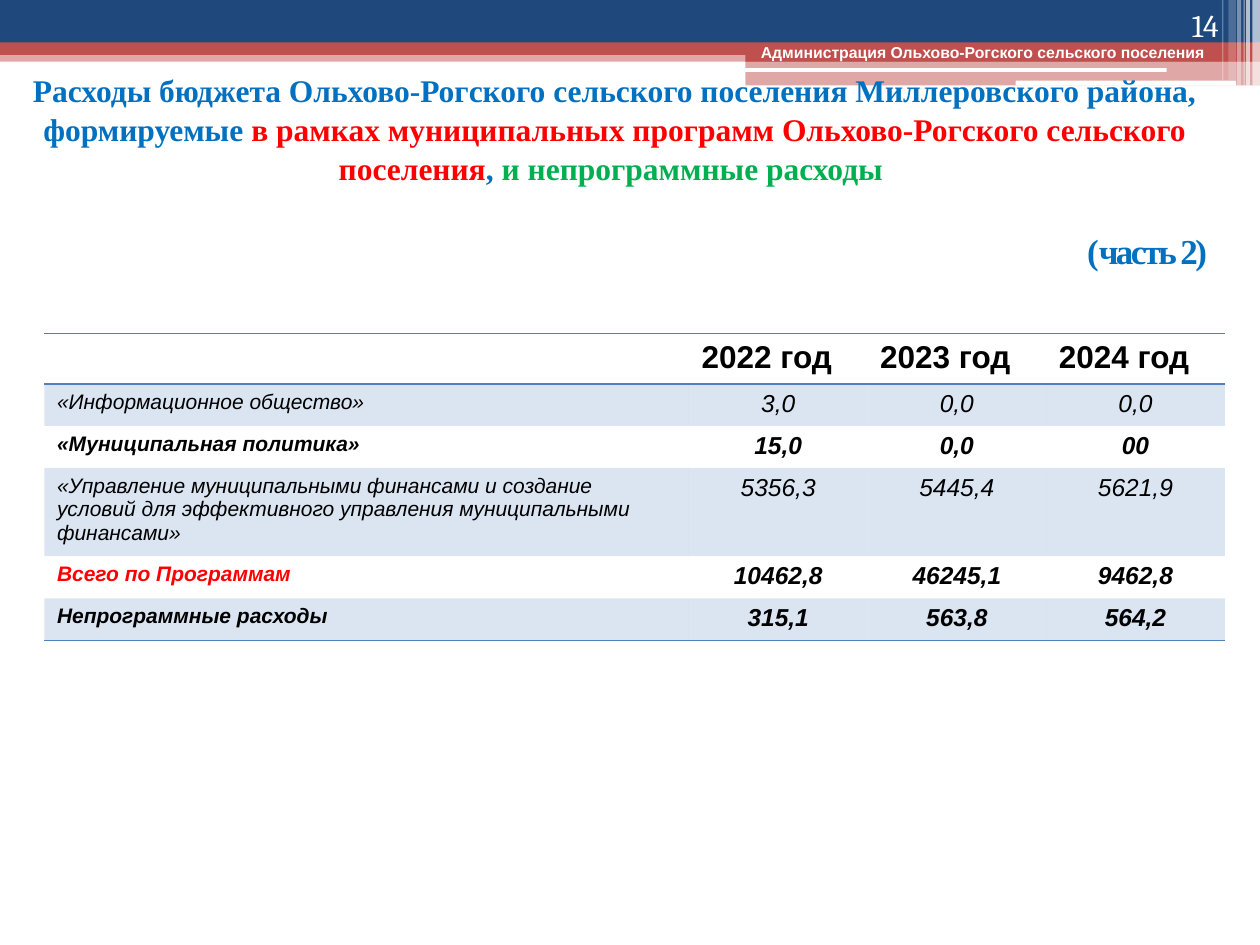
from lxml.etree import SubElement
from pptx import Presentation
from pptx.dml.color import RGBColor
from pptx.enum.shapes import MSO_SHAPE
from pptx.enum.text import MSO_ANCHOR, PP_ALIGN
from pptx.oxml.ns import qn
from pptx.util import Pt

WHITE = RGBColor(0xFF, 0xFF, 0xFF)
BLACK = RGBColor(0, 0, 0)
NAVY = RGBColor(0x1F, 0x49, 0x7D)
BRICK = RGBColor(0xC0, 0x50, 0x4D)
STEEL = RGBColor(0x4F, 0x81, 0xBD)
BLUE = RGBColor(0x00, 0x70, 0xC0)
RED = RGBColor(0xFF, 0, 0)
GREEN = RGBColor(0x00, 0xB0, 0x50)

# Header bands: left, top, width, height, colour, opacity in percent
BANDS = [
    (0, 28.8, 720, 6.5, BRICK, 50),
    (0, 0, 720, 24.5, NAVY, 100),
    (0, 24.2, 720, 7.2, BRICK, 100),
    (426, 28, 294, 7.2, BRICK, 100),
    (426, 34.6, 294, 14.2, BRICK, 50),
]
# White rounded bars: left, top, width, height
BARS = [(425.5, 38.9, 241.2, 2.2), (580.3, 46.1, 126, 2.9)]
# White stripes at the right edge: left, width, height, opacity in percent
STRIPES = [
    (715.7, 4.3, 49, 65), (712.1, 2.2, 49, 65), (710.6, 0.7, 49, 60),
    (707, 2.2, 49, 40), (702, 4.3, 46, 20), (698.4, 0.7, 46, 30),
]

# Title runs: text and colour
TITLE = [
    ("Расходы бюджета Ольхово-Рогского сельского поселения "
     "Миллеровского района, формируемые ", BLUE),
    ("в рамках муниципальных программ Ольхово-Рогского сельского поселения", RED),
    (", ", BLUE),
    ("и непрограммные расходы ", GREEN),
]

HEADINGS = ["", "2022 год", "2023 год", "2024 год"]
# Table rows: values, bold, colour of the name, height
ROWS = [
    (["«Информационное общество»", "3,0", "0,0", "0,0"], False, BLACK, 23),
    (["«Муниципальная политика»", "15,0", "0,0", "00"], True, BLACK, 23),
    (["«Управление муниципальными финансами и создание условий для эффективного "
      "управления муниципальными финансами»", "5356,3", "5445,4", "5621,9"],
     False, BLACK, 47.5),
    (["Всего по Программам", "10462,8", "46245,1", "9462,8"], True, RED, 23),
    (["Непрограммные расходы", "315,1", "563,8", "564,2"], True, BLACK, 23),
]


def set_opacity(fill_parent, percent):
    color = fill_parent.find(qn("a:solidFill")).find(qn("a:srgbClr"))
    SubElement(color, qn("a:alpha"), val=str(percent * 1000))


def style(font, name, size, color, bold=False, italic=False):
    font.name, font.size, font.bold, font.italic = name, Pt(size), bold, italic
    font.color.rgb = color


def add_band(page, box, color, opacity=100, kind=MSO_SHAPE.RECTANGLE):
    band = page.shapes.add_shape(kind, *(Pt(value) for value in box))
    band.shadow.inherit = False
    band.fill.solid()
    band.fill.fore_color.rgb = color
    band.line.fill.background()
    if opacity < 100:
        set_opacity(band.element.spPr, opacity)


def add_header(page):
    for *box, color, opacity in BANDS:
        add_band(page, box, color, opacity)
    for box in BARS:
        add_band(page, box, WHITE, kind=MSO_SHAPE.ROUNDED_RECTANGLE)
    for left, width, height, opacity in STRIPES:
        add_band(page, (left, 0, width, height), WHITE, opacity)


def add_label(page, box, text, name, size, bold, align, anchor):
    label = page.shapes.add_textbox(*(Pt(value) for value in box))
    frame = label.text_frame
    frame.word_wrap = True
    frame.vertical_anchor = anchor
    para = frame.paragraphs[0]
    para.text = text
    para.alignment = align
    style(para.font, name, size, WHITE, bold)


def fill_title(page, box):
    title = page.shapes.title
    title.left, title.top, title.width, title.height = (Pt(value) for value in box)
    # The title lies above the header bands
    title.element.getparent().append(title.element)
    frame = title.text_frame
    frame.word_wrap = True
    frame.vertical_anchor = MSO_ANCHOR.MIDDLE

    heading = frame.paragraphs[0]
    heading.alignment = PP_ALIGN.CENTER
    heading.line_spacing = 1.04
    style(heading.font, "Times New Roman", 18, BLUE, True)
    for text, color in TITLE:
        span = heading.add_run()
        span.text = text
        span.font.color.rgb = color

    # Part number, indented to the right edge
    part = frame.add_paragraph()
    part.alignment = PP_ALIGN.LEFT
    part.space_before = Pt(24)
    part._p.get_or_add_pPr().set("marL", str(Pt(614)))
    style(part.font, "Times New Roman", 20, BLUE, True)
    part.add_run().text = "("
    span = part.add_run()
    span.text = "часть 2)"
    span._r.get_or_add_rPr().set("spc", "-150")


def add_border(cell, side):
    line = cell._tc.get_or_add_tcPr().makeelement(qn(f"a:{side}"), {"w": str(Pt(1))})
    fill = SubElement(line, qn("a:solidFill"))
    SubElement(fill, qn("a:srgbClr"), val=str(STEEL))
    cell._tc.tcPr.insert(0, line)


def fill_cell(cell, text, size, color, bold, italic, align):
    para = cell.text_frame.paragraphs[0]
    para.text = text
    para.alignment = align
    style(para.font, "Arial", size, color, bold, italic)


def add_budget_table(page, box):
    frame = page.shapes.add_table(len(ROWS) + 1, len(HEADINGS),
                                  *(Pt(value) for value in box))
    table = frame.table
    table.first_row = table.horz_banding = False
    for style_id in frame.element.iter(qn("a:tableStyleId")):
        style_id.text = "{2D5ABB26-0587-4C30-8999-92F81FD0307C}"
    year_width = 102.1
    table.columns[0].width = Pt(box[2] - 3 * year_width)
    for column in range(1, 4):
        table.columns[column].width = Pt(year_width)

    # Heading row
    table.rows[0].height = Pt(28)
    for column, text in enumerate(HEADINGS):
        cell = table.cell(0, column)
        cell.fill.background()
        fill_cell(cell, text, 18, BLACK, True, False, PP_ALIGN.LEFT)
        add_border(cell, "lnB")
        add_border(cell, "lnT")

    # Programme rows, every other one tinted
    for row, (values, bold, name_color, height) in enumerate(ROWS, 1):
        table.rows[row].height = Pt(height)
        for column, text in enumerate(values):
            cell = table.cell(row, column)
            if row % 2:
                cell.fill.solid()
                cell.fill.fore_color.rgb = STEEL
                set_opacity(cell._tc.tcPr, 20)
            else:
                cell.fill.background()
            if column:
                fill_cell(cell, text, 14, BLACK, bold, True, PP_ALIGN.CENTER)
            else:
                fill_cell(cell, text, 12, name_color, bold, True, PP_ALIGN.LEFT)
            if row == len(ROWS):
                add_border(cell, "lnB")


def main():
    deck = Presentation()
    deck.slide_width, deck.slide_height = Pt(720), Pt(540)
    page = deck.slides.add_slide(deck.slide_layouts[5])
    add_header(page)
    add_label(page, (427.7, 20.9, 272.2, 18),
              "Администрация Ольхово-Рогского сельского поселения",
              "Arial", 9, True, PP_ALIGN.LEFT, MSO_ANCHOR.TOP)
    fill_title(page, (0, 49, 702.7, 96.5))
    add_label(page, (643.7, 0, 59.8, 28.8), "14", "Cambria", 18, False,
              PP_ALIGN.RIGHT, MSO_ANCHOR.BOTTOM)
    add_budget_table(page, (25.4, 190.5, 674.6, 167.5))
    deck.save("out.pptx")


if __name__ == "__main__":
    main()
